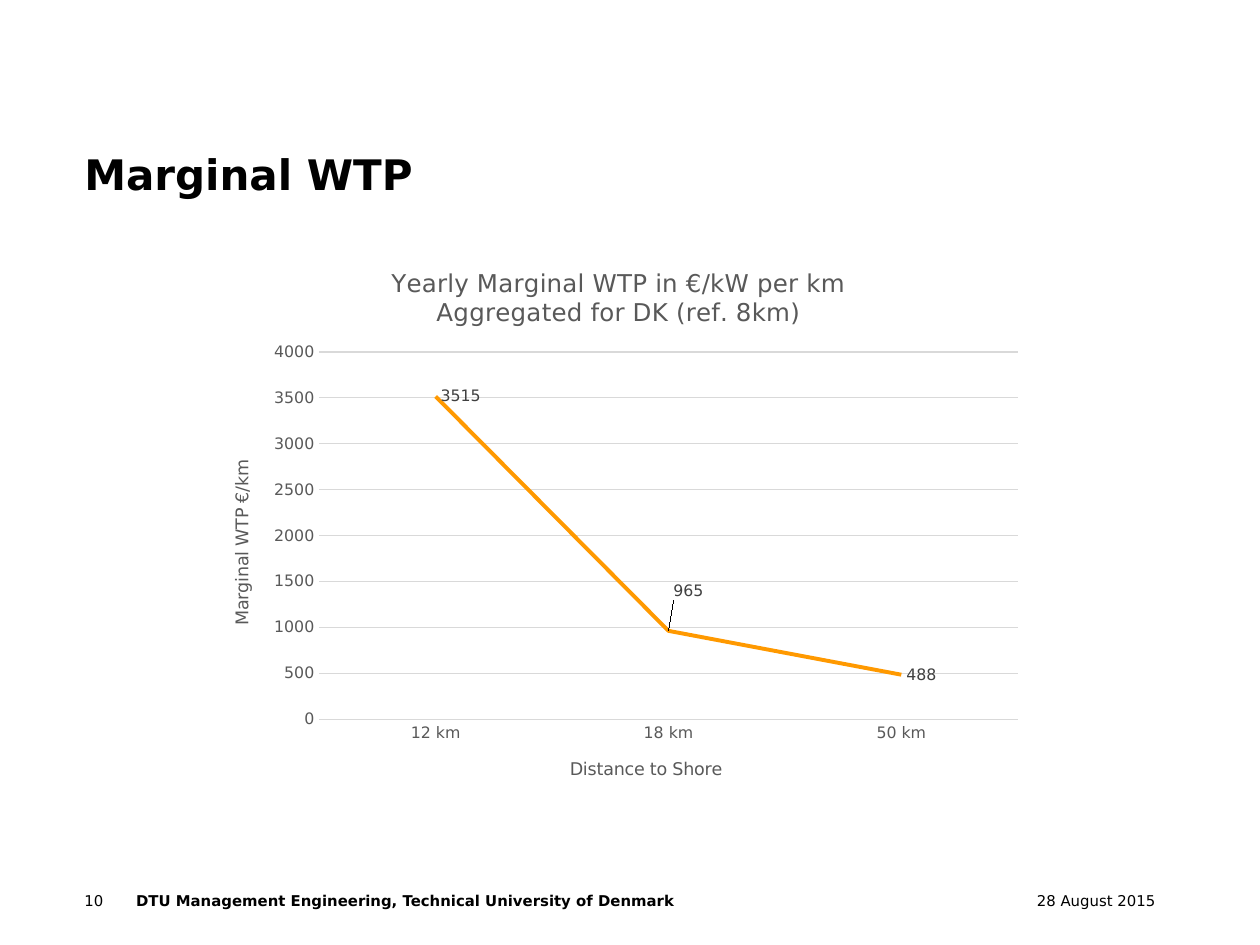
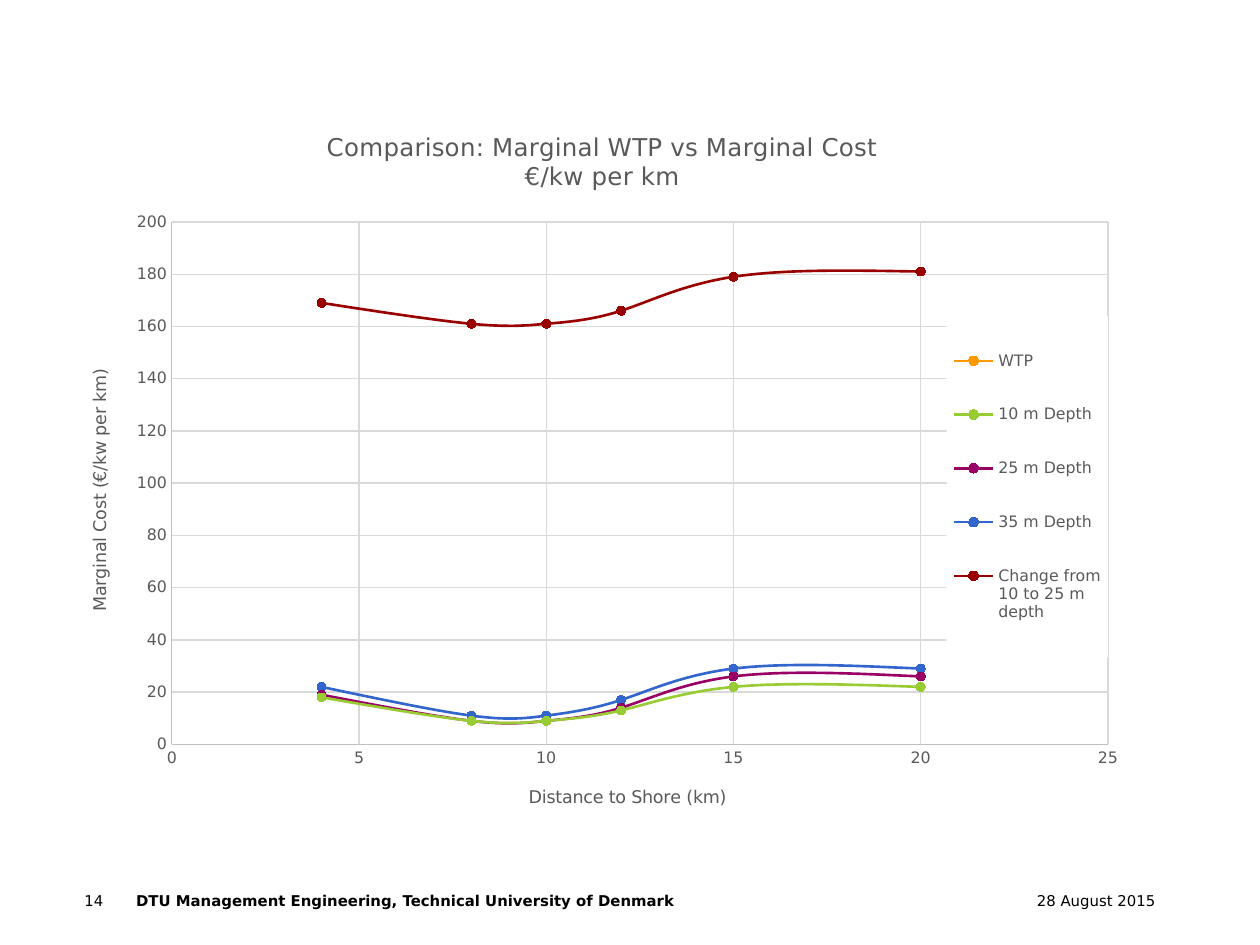
"""Build two slides that chart willingness to pay and marginal cost by distance to shore."""
import pptx
import pptx.chart.data
import pptx.dml.color
import pptx.enum.chart
import pptx.enum.text
import pptx.oxml
import pptx.oxml.ns
import pptx.util

Inches = pptx.util.Inches
Pt = pptx.util.Pt
qn = pptx.oxml.ns.qn
KIND = pptx.enum.chart.XL_CHART_TYPE
ALIGN = pptx.enum.text.PP_ALIGN
ANCHOR = pptx.enum.text.MSO_ANCHOR
FONT = "DejaVu Sans"
HUES = {
    "ink": "000000", "gray": "595959", "label": "404040", "paper": "FFFFFF",
    "grid": "D9D9D9", "axis": "BFBFBF", "orange": "FF9900", "green": "99CC33",
    "plum": "990066", "blue": "3366CC", "red": "990000",
}


def tint(name):
    return pptx.dml.color.RGBColor.from_string(HUES[name])


def style(font, size, hue="gray", bold=False):
    font.name = FONT
    font.size = Pt(size)
    font.bold = bold
    font.color.rgb = tint(hue)


def write(frame, text, size, hue="gray", bold=False, align=None):
    frame.text = text
    for line in frame.paragraphs:
        line.alignment = align
        for run in line.runs:
            style(run.font, size, hue, bold)


def stroke(line, hue, width):
    line.color.rgb = tint(hue)
    line.width = Pt(width)


def node(body):
    space = pptx.oxml.ns.nsdecls("c", "a")
    head, rest = body.split(">", 1)
    return pptx.oxml.parse_xml(f"{head} {space}>{rest}")


def layout(modes="", **parts):
    items = "".join(f'<c:{key} val="{val}"/>' for key, val in parts.items())
    return node(f"<c:layout><c:manualLayout>{modes}{items}</c:manualLayout></c:layout>")


EDGE = '<c:xMode val="edge"/><c:yMode val="edge"/>'
INNER = '<c:layoutTarget val="inner"/>' + EDGE
NO_LEADER = (
    '<c:extLst><c:ext uri="{CE6537A1-D6FC-4f65-9D91-7224C49458BB}" '
    'xmlns:c15="http://schemas.microsoft.com/office/drawing/2012/chart">'
    '<c15:showLeaderLines val="0"/></c:ext></c:extLst>'
)


class Deck:
    """Hold the shared style and the current slide."""

    def __init__(self):
        self.file = pptx.Presentation()
        self.file.slide_width = Inches(10)
        self.file.slide_height = Inches(7.5)
        self.slide = None

    def page(self, number):
        self.slide = self.file.slides.add_slide(self.file.slide_layouts[6])
        self.text("28 August 2015", (7.6, 7.08, 1.57, 0.33), align=ALIGN.RIGHT)
        self.text("DTU Management Engineering, Technical University of Denmark",
                  (1.08, 7.08, 4.63, 0.33), bold=True)
        self.text(str(number), (0.67, 7.08, 0.33, 0.33))

    def text(self, words, box, size=8.5, anchor=ANCHOR.TOP, **look):
        frame = self.slide.shapes.add_textbox(*map(Inches, box)).text_frame
        frame.word_wrap = True
        frame.vertical_anchor = anchor
        frame.margin_left = frame.margin_right = 0
        frame.margin_top = frame.margin_bottom = 0
        write(frame, words, size, "ink", **look)

    def title(self, words):
        self.text(words, (0.67, 0.33, 8.5, 1.25), 24, ANCHOR.BOTTOM, bold=True)

    def chart(self, kind, data, box, title, plot):
        chart = self.slide.shapes.add_chart(kind, *map(Inches, box), data).chart
        style(chart.font, 10, "ink")
        chart.has_legend = False
        chart.has_title = True
        write(chart.chart_title.text_frame, title, 14)
        area = chart._chartSpace.chart.plotArea
        for old in area.findall(qn("c:layout")):
            area.remove(old)
        area.insert(0, layout(INNER, **plot))
        chart.plots[0].vary_by_categories = False
        return chart

    def axis(self, axis, title, hue=None, grid=True, top=None):
        axis.has_title = True
        write(axis.axis_title.text_frame, title, 10)
        style(axis.tick_labels.font, 9)
        axis.major_tick_mark = pptx.enum.chart.XL_TICK_MARK.NONE
        axis.minor_tick_mark = pptx.enum.chart.XL_TICK_MARK.NONE
        axis.has_major_gridlines = grid
        if grid:
            stroke(axis.major_gridlines.format.line, "grid", 0.75)
        if hue:
            stroke(axis.format.line, hue, 0.75)
        else:
            axis.format.line.fill.background()
        if top:
            axis.minimum_scale = 0
            axis.maximum_scale = top

    def curve(self, line, hue):
        stroke(line.format.line, hue, 1.5)
        line.marker.style = pptx.enum.chart.XL_MARKER_STYLE.CIRCLE
        line.marker.size = 5
        line.marker.format.fill.solid()
        line.marker.format.fill.fore_color.rgb = tint(hue)
        stroke(line.marker.format.line, hue, 0.75)
        root = line._element
        for old in root.findall(qn("c:smooth")):
            root.remove(old)
        root.find(qn("c:yVal")).addnext(node('<c:smooth val="1"></c:smooth>'))
        for value in root.findall(f"{qn('c:yVal')}//{qn('c:pt')}"):
            if value.findtext(qn("c:v")) in ("None", "", None):
                value.getparent().remove(value)

    def legend(self, chart, place):
        chart.has_legend = True
        key = chart.legend
        key.position = pptx.enum.chart.XL_LEGEND_POSITION.RIGHT
        key.include_in_layout = True
        style(key.font, 9)
        root = key._element
        for old in root.findall(qn("c:layout")):
            root.remove(old)
        root.find(qn("c:legendPos")).addnext(layout(EDGE, **place))
        root.find(qn("c:overlay")).addnext(node(
            f'<c:spPr><a:solidFill><a:srgbClr val="{HUES["paper"]}"/></a:solidFill></c:spPr>'))


def demand(deck):
    deck.page(10)
    deck.title("Marginal WTP")
    data = pptx.chart.data.CategoryChartData(number_format="0")
    data.categories = ["12 km", "18 km", "50 km"]
    data.add_series("Series 1", [3515, 965, 488])
    chart = deck.chart(
        KIND.LINE, data, (1.61, 1.94, 6.6, 4.49),
        "Yearly Marginal WTP in €/kW per km\nAggregated for DK (ref. 8km)",
        dict(x=0.14, y=0.19, w=0.84, h=0.65))
    deck.axis(chart.category_axis, "Distance to Shore", "grid", grid=False)
    deck.axis(chart.value_axis, "Marginal WTP €/km")
    line = chart.plots[0].series[0]
    line.smooth = False
    stroke(line.format.line, "orange", 2.25)
    right = pptx.enum.chart.XL_LABEL_POSITION.RIGHT
    labels = line.data_labels
    labels.show_value = True
    labels.position = right
    labels.number_format = "0"
    labels.number_format_is_linked = False
    style(labels.font, 9, "label")
    label = line.points[1].data_label
    label.position = right
    style(label.font, 9, "label")
    mark = line._element.find(".//" + qn("c:dLbl"))
    mark.find(qn("c:idx")).addnext(layout(x=0, y=-0.07))
    mark.getparent().append(pptx.oxml.parse_xml(NO_LEADER.replace(
        "<c:extLst>", f"<c:extLst {pptx.oxml.ns.nsdecls('c')}>")))


def costs(deck):
    deck.page(14)
    shore = [4, 8, 10, 12, 15, 20]
    rows = [
        ("WTP", "orange", [None] * len(shore)),
        ("10 m Depth", "green", [18, 9, 9, 13, 22, 22]),
        ("25 m Depth", "plum", [19, 9, 9, 14, 26, 26]),
        ("35 m Depth", "blue", [22, 11, 11, 17, 29, 29]),
        ("Change from 10 to 25 m depth", "red", [169, 161, 161, 166, 179, 181]),
    ]
    data = pptx.chart.data.XyChartData()
    for name, _, costs_at in rows:
        line = data.add_series(name)
        for point in zip(shore, costs_at):
            line.add_data_point(*point)
    chart = deck.chart(
        KIND.XY_SCATTER_SMOOTH, data, (0.51, 0.84, 8.54, 5.76),
        "Comparison: Marginal WTP vs Marginal Cost\n€/kw per km",
        dict(x=0.1, y=0.16, w=0.87, h=0.72))
    deck.axis(chart.category_axis, "Distance to Shore (km)", "axis", top=25)
    deck.axis(chart.value_axis, "Marginal Cost (€/kw per km)", "axis", top=200)
    for line, (_, hue, _) in zip(chart.plots[0].series, rows):
        deck.curve(line, hue)
    deck.legend(chart, dict(x=0.82, y=0.29, w=0.15, h=0.47))


def main():
    deck = Deck()
    demand(deck)
    costs(deck)
    deck.file.save("out.pptx")


if __name__ == "__main__":
    main()
